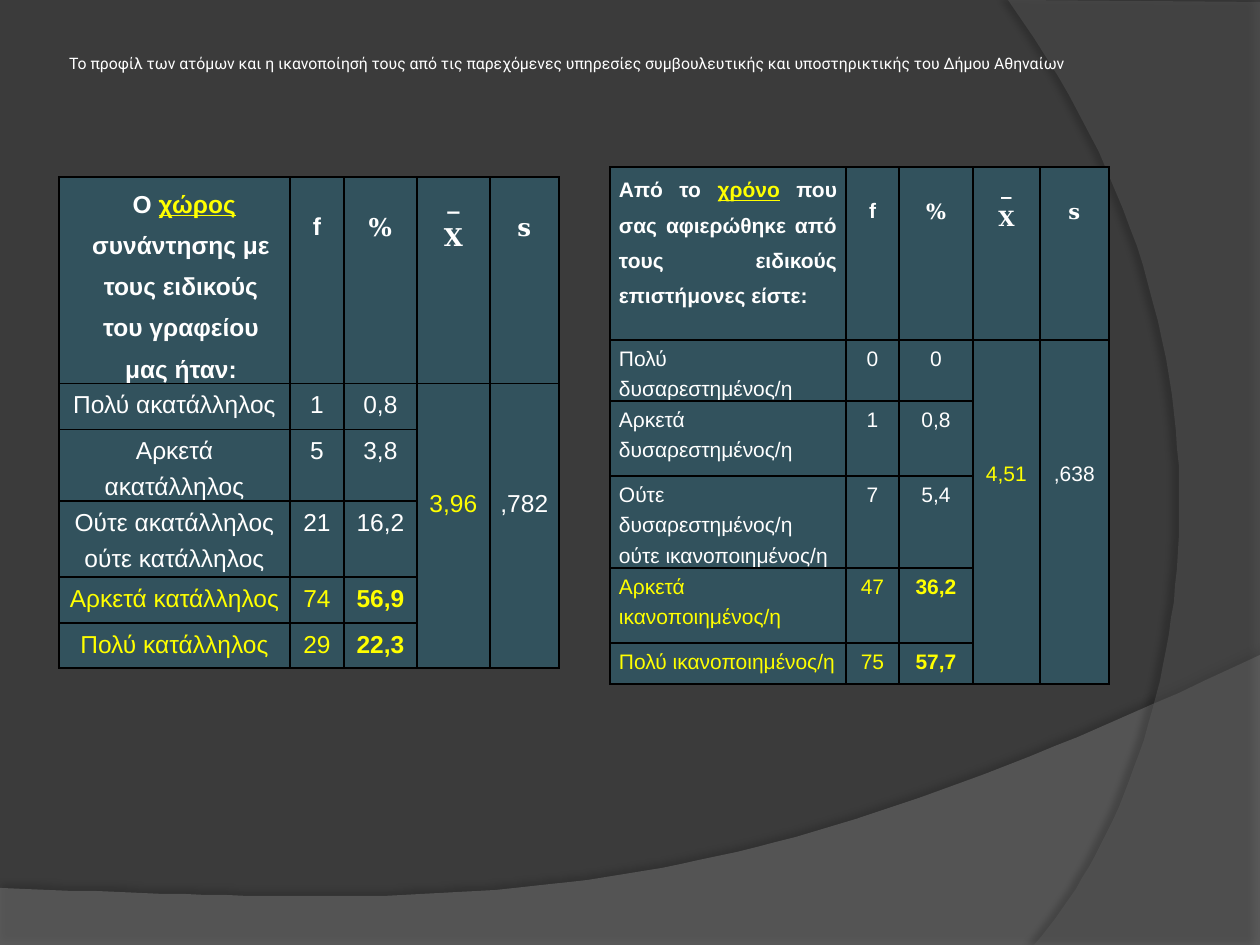
from lxml.etree import SubElement
from pptx import Presentation
from pptx.dml.color import RGBColor
from pptx.enum.text import MSO_ANCHOR, PP_ALIGN
from pptx.oxml import parse_xml
from pptx.oxml.ns import nsdecls, qn
from pptx.util import Pt

PX = 914400 / 126
WHITE, YELLOW, BLACK, TEAL = "FFFFFF", "FFFF00", "000000", "32525D"
SERIF = "DejaVu Serif"
MID, LEFT, JUST = PP_ALIGN.CENTER, PP_ALIGN.LEFT, PP_ALIGN.JUSTIFY

SPACE = dict(
    box=(59, 177), size=14, align=MID, indent=13, drops=(28, 99),
    cols=(231, 54, 73, 73, 69), rows=(206, 46, 71, 76, 46, 45),
    head=" Ο |χώρος| συνάντησης με τους ειδικούς του γραφείου μας ήταν:",
    stats=("3,96", ",782"),
    data=(("Πολύ ακατάλληλος", "1", "0,8"),
          ("Αρκετά ακατάλληλος", "5", "3,8"),
          ("Ούτε ακατάλληλος ούτε κατάλληλος", "21", "16,2"),
          ("Αρκετά κατάλληλος", "74", "56,9"),
          ("Πολύ κατάλληλος", "29", "22,3")))
TIME = dict(
    box=(610, 167), size=12, align=JUST, indent=0, drops=(25, 115),
    cols=(236, 53, 74, 67, 69), rows=(173, 61, 75, 92, 75, 41),
    head="Από το |χρόνο| που σας αφιερώθηκε από τους ειδικούς "
         "επιστήμονες είστε: ",
    stats=("4,51", ",638"),
    data=(("Πολύ δυσαρεστημένος/η", "0", "0"),
          ("Αρκετά δυσαρεστημένος/η", "1", "0,8"),
          ("Ούτε δυσαρεστημένος/η ούτε ικανοποιημένος/η", "7", "5,4"),
          ("Αρκετά ικανοποιημένος/η", "47", "36,2"),
          ("Πολύ ικανοποιημένος/η", "75", "57,7")))


def px(num):
    """Turn pixels into EMU."""
    return round(num * PX)


def rgb(code):
    """Turn a hex string into a colour."""
    return RGBColor.from_string(code)


def write(frame, text, size=14, font="Arial", color=WHITE, bold=False,
          align=MID, gap=1.3, indent=0):
    """Write lines of text, with the parts between bars highlighted."""
    frame.word_wrap = True
    for row, line in enumerate(text.split("\n")):
        para = frame.add_paragraph() if row else frame.paragraphs[0]
        para.alignment, para.line_spacing = align, gap
        props = para._p.get_or_add_pPr()
        props.set("marL", str(px(indent)))
        props.set("indent", "0")
        for turn, part in enumerate(line.split("|")):
            run = para.add_run()
            run.text = part
            run.font.size, run.font.name = Pt(size), font
            run.font.bold, run.font.underline = bold, turn % 2 == 1
            run.font.color.rgb = rgb(YELLOW if turn % 2 else color)


def curve(start, one, two, end, steps=60):
    """Return points along a cubic curve."""
    return [tuple(a * (1 - t) ** 3 + 3 * b * t * (1 - t) ** 2
                  + 3 * c * t * t * (1 - t) + d * t ** 3
                  for a, b, c, d in zip(start, one, two, end))
            for t in (n / steps for n in range(steps + 1))]


def swoosh(slide, points, color, alpha, shade):
    """Draw a see-through shape with a soft shadow behind the title."""
    build = slide.shapes.build_freeform(*points[0], scale=PX)
    build.add_line_segments(points[1:], close=True)
    shape = build.convert_to_shape()
    shape.fill.solid()
    shape.fill.fore_color.rgb = rgb(color)
    shape.line.fill.background()
    tint = shape.element.spPr.find(qn("a:solidFill"))[0]
    SubElement(tint, qn("a:alpha")).set("val", str(alpha * 1000))
    dark, blur, dist, angle = shade
    shape.element.spPr.append(parse_xml(
        f'<a:effectLst {nsdecls("a")}><a:outerShdw blurRad="{Pt(blur)}" '
        f'dist="{Pt(dist)}" dir="{angle * 60000}" algn="tl" '
        f'rotWithShape="0"><a:srgbClr val="{BLACK}">'
        f'<a:alpha val="{dark * 1000}"/></a:srgbClr>'
        '</a:outerShdw></a:effectLst>'))
    slide.shapes.title.element.addprevious(shape.element)


def style(cell):
    """Give a cell its fill, margins and borders."""
    cell.fill.solid()
    cell.fill.fore_color.rgb = rgb(TEAL)
    cell.margin_left = cell.margin_right = px(9)
    cell.margin_top = cell.margin_bottom = 0
    props = cell._tc.get_or_add_tcPr()
    for spot, side in enumerate("LRTB"):
        props.insert(spot, parse_xml(
            f'<a:ln{side} {nsdecls("a")} w="{Pt(1)}"><a:solidFill>'
            f'<a:srgbClr val="{BLACK}"/></a:solidFill></a:ln{side}>'))


def grid(slide, box, size, align, indent, drops, cols, rows, head, stats,
         data):
    """Add one table of answers with its mean and deviation."""
    table = slide.shapes.add_table(
        len(rows), len(cols), px(box[0]), px(box[1]),
        px(sum(cols)), px(sum(rows))).table
    table.first_row = table.horz_banding = False
    for col, wide in zip(table.columns, cols):
        col.width = px(wide)
    for row, high in zip(table.rows, rows):
        row.height = px(high)
    for cell in table.iter_cells():
        style(cell)

    write(table.cell(0, 0).text_frame, head, size=size, bold=True,
          align=align, gap=1.5, indent=indent)
    for col, name in enumerate(("f", "%", "_\nΧ", "s"), 1):
        cell = table.cell(0, col)
        cell.margin_top = 0 if "\n" in name else px(drops[0])
        write(cell.text_frame, name, size=size, bold=True,
              font="Arial" if col == 1 else SERIF)
    for row, line in enumerate(data, 1):
        for col, text in enumerate(line):
            write(table.cell(row, col).text_frame, text, size=size,
                  color=YELLOW if row > 3 else WHITE,
                  bold=row > 3 and col == 2, align=MID if col else align)
    for col, text, color in zip((3, 4), stats, (YELLOW, WHITE)):
        cell = table.cell(1, col)
        cell.merge(table.cell(len(data), col))
        cell.margin_top = px(drops[1])
        write(cell.text_frame, text, size=size, color=color)


def head(slide):
    """Place and format the title."""
    title = slide.shapes.title
    title.left, title.top = px(63), px(38)
    title.width, title.height = px(1029), px(70)
    frame = title.text_frame
    frame.vertical_anchor = MSO_ANCHOR.TOP
    frame.margin_left = frame.margin_right = frame.margin_bottom = px(6)
    frame.margin_top = px(16)
    write(frame, "Το προφίλ των ατόμων και η ικανοποίησή τους από τις "
          "παρεχόμενες υπηρεσίες συμβουλευτικής και υποστηρικτικής του "
          "Δήμου Αθηναίων", size=9, font="Roboto", align=LEFT, gap=1.0)


def main():
    """Build the slide and save it."""
    deck = Presentation()
    deck.slide_width, deck.slide_height = px(1260), px(945)
    slide = deck.slides.add_slide(deck.slide_layouts[5])
    slide.background.fill.solid()
    slide.background.fill.fore_color.rgb = rgb("3B3B3B")
    wave = curve((1260, 655), (704, 919), (493, 906), (0, 888))
    swoosh(slide, wave + [(0, 945), (1260, 945)], "7F7F7F", 45,
           (35, 4, 3.5, 270))
    arc = curve((1034, 945), (1178, 780), (1283, 378), (1008, 0))
    swoosh(slide, arc + [(1260, 2), (1260, 945)], "5E5E5E", 40,
           (45, 4, 4, 180))
    head(slide)
    for part in (SPACE, TIME):
        grid(slide, **part)
    deck.save("out.pptx")


if __name__ == "__main__":
    main()
